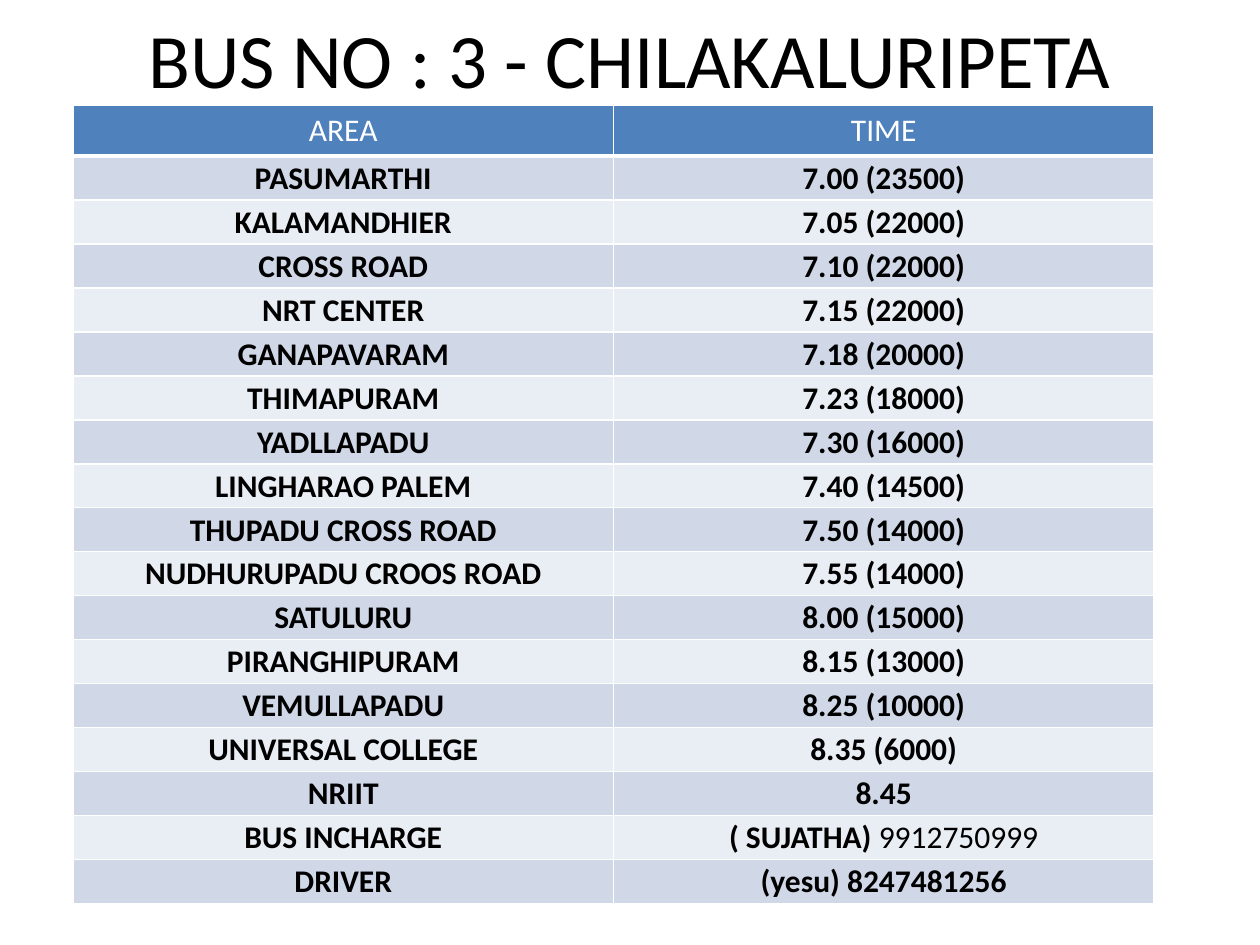
from typing import NamedTuple

from lxml.etree import SubElement
from pptx import Presentation
from pptx.dml.color import RGBColor
from pptx.enum.text import MSO_ANCHOR, PP_ALIGN
from pptx.oxml.ns import qn
from pptx.util import Pt

EMU_PER_PX = 914400 / 126
FONT = "Calibri"
COLORS = {
    "text": "000000",
    "header_text": "FFFFFF",
    "header": "4F81BD",
    "odd_row": "D0D8E8",
    "even_row": "E9EDF4",
    "border": "FFFFFF",
}


class Stop(NamedTuple):
    area: str
    time: str
    plain_time: str = ""  # unbolded ending of the time cell


STOPS = [
    Stop("PASUMARTHI", "7.00 (23500)"),
    Stop("KALAMANDHIER", "7.05 (22000)"),
    Stop("CROSS ROAD", "7.10 (22000)"),
    Stop("NRT CENTER", "7.15 (22000)"),
    Stop("GANAPAVARAM", "7.18 (20000)"),
    Stop("THIMAPURAM", "7.23 (18000)"),
    Stop("YADLLAPADU", "7.30 (16000)"),
    Stop("LINGHARAO PALEM", "7.40 (14500)"),
    Stop("THUPADU CROSS ROAD", "7.50 (14000)"),
    Stop("NUDHURUPADU CROOS ROAD", "7.55 (14000)"),
    Stop("SATULURU", "8.00 (15000)"),
    Stop("PIRANGHIPURAM", "8.15 (13000)"),
    Stop("VEMULLAPADU", "8.25 (10000)"),
    Stop("UNIVERSAL COLLEGE", "8.35 (6000)"),
    Stop("NRIIT", "8.45"),
    Stop("BUS INCHARGE", "( SUJATHA) ", "9912750999"),
    Stop("DRIVER", "(yesu) 8247481256"),
]


def px(length: int) -> int:
    return round(length * EMU_PER_PX)


def color(name: str) -> RGBColor:
    return RGBColor.from_string(COLORS[name])


def format_para(para, size: int, text_color: str, bold: bool) -> None:
    para.alignment = PP_ALIGN.CENTER
    para.font.name = FONT
    para.font.size = Pt(size)
    para.font.bold = bold
    para.font.color.rgb = color(text_color)


def set_borders(cell, bottom: int = 1, top: int = 1) -> None:
    properties = cell._tc.get_or_add_tcPr()
    for side, width in (("L", 1), ("R", 1), ("T", top), ("B", bottom)):
        line = SubElement(properties, qn(f"a:ln{side}"), w=str(Pt(width)))
        fill = SubElement(line, qn("a:solidFill"))
        SubElement(fill, qn("a:srgbClr"), val=COLORS["border"])


def fill_cell(cell, text: str, fill: str, text_color: str, bold: bool) -> None:
    cell.fill.solid()
    cell.fill.fore_color.rgb = color(fill)
    para = cell.text_frame.paragraphs[0]
    para.add_run().text = text
    format_para(para, 18, text_color, bold)


def add_title(page, text: str) -> None:
    title = page.shapes.title
    title.left, title.top, title.width, title.height = px(95), 0, px(1070), px(116)
    title.text_frame.text = text
    title.text_frame.vertical_anchor = MSO_ANCHOR.MIDDLE
    format_para(title.text_frame.paragraphs[0], 44, "text", False)


def add_timetable(page, stops: list[Stop]) -> None:
    header_height, row_height = 50, 44
    height = header_height + row_height * len(stops)
    table = page.shapes.add_table(
        len(stops) + 1, 2, px(73), px(105), px(1081), px(height)
    ).table
    table.rows[0].height = px(header_height)

    # Header row
    for cell, heading in zip(table.rows[0].cells, ("AREA", "TIME")):
        set_borders(cell, bottom=3)
        fill_cell(cell, heading, "header", "header_text", False)

    # One banded row for each stop
    for number, stop in enumerate(stops, start=1):
        row = table.rows[number]
        row.height = px(row_height)
        band = "odd_row" if number % 2 else "even_row"
        for cell, text in zip(row.cells, (stop.area, stop.time)):
            cell.vertical_anchor = MSO_ANCHOR.MIDDLE
            cell.margin_left = cell.margin_right = cell.margin_top = px(1)
            cell.margin_bottom = 0
            set_borders(cell, top=3 if number == 1 else 1)
            fill_cell(cell, text, band, "text", True)
        if stop.plain_time:
            span = row.cells[1].text_frame.paragraphs[0].add_run()
            span.text = stop.plain_time
            span.font.bold = False


def main() -> None:
    deck = Presentation()
    deck.slide_width, deck.slide_height = px(1260), px(945)
    page = deck.slides.add_slide(deck.slide_layouts[5])
    add_title(page, "BUS NO : 3 - CHILAKALURIPETA")
    add_timetable(page, STOPS)
    deck.save("out.pptx")


if __name__ == "__main__":
    main()
